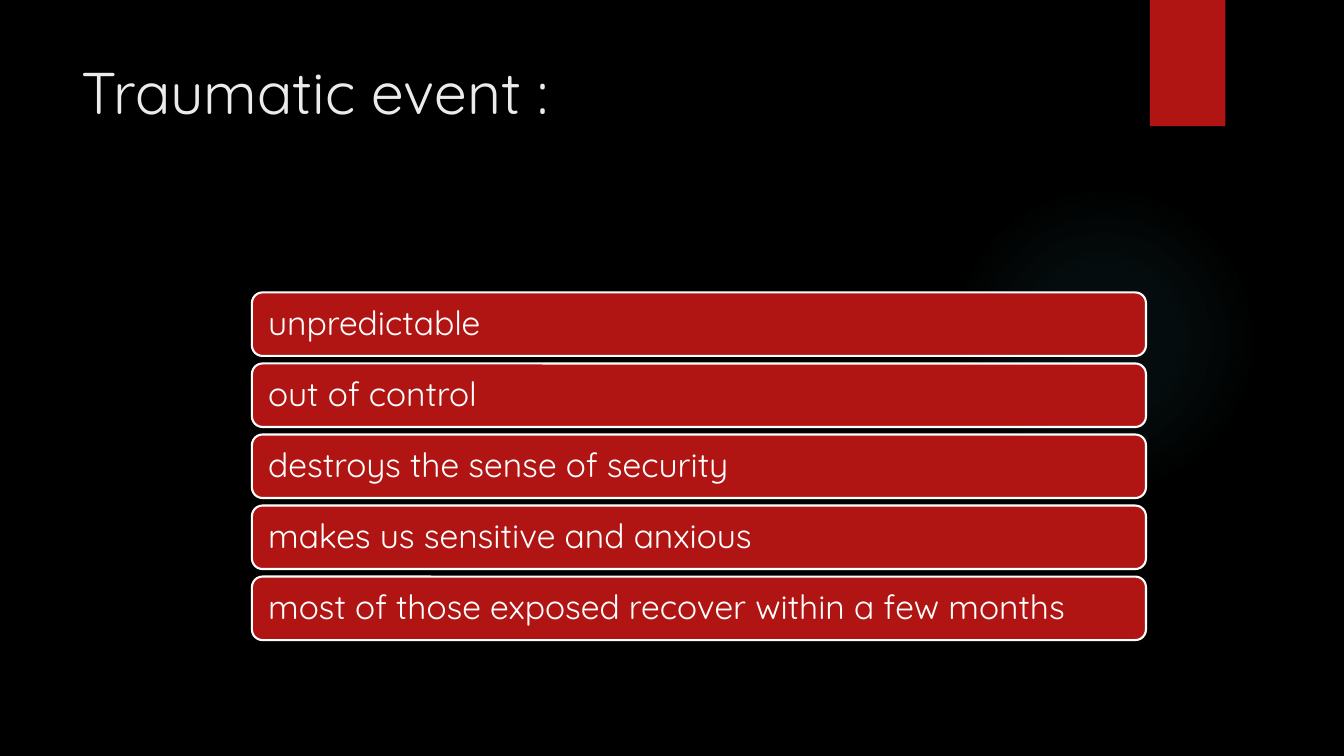
"""Build the "Traumatic event" slide: a title and five red bars on black."""
from lxml import etree
from pptx import Presentation
from pptx.dml.color import RGBColor
from pptx.enum.shapes import MSO_SHAPE
from pptx.enum.text import MSO_ANCHOR, PP_ALIGN
from pptx.util import Cm, Pt

OVAL = MSO_SHAPE.OVAL
RECTANGLE = MSO_SHAPE.RECTANGLE
ROUNDED = MSO_SHAPE.ROUNDED_RECTANGLE
TOP = MSO_ANCHOR.TOP
MIDDLE = MSO_ANCHOR.MIDDLE
LEFT = PP_ALIGN.LEFT

COLORS = {
    "background": "000000",
    "red": "B01513",
    "white": "FFFFFF",
    "title": "EBEBEB",
    "glow": "50B9C1",
}
FONT = "Quicksand"
DRAWING = "http://schemas.openxmlformats.org/drawingml/2006/main"
GLOW_STOPS = [(0, 7), (36, 6), (69, 0)]
FEATURES = [
    "unpredictable",
    "out of control",
    "destroys the sense of security",
    "makes us sensitive and anxious",
    "most of those exposed recover within a few months",
]
BAR_TOP = 7.37
BAR_STEP = 1.79


def add_filled(kind, left, top, width, height, color):
    shape = slide.shapes.add_shape(kind, Cm(left), Cm(top), Cm(width), Cm(height))
    shape.shadow.inherit = False
    shape.fill.solid()
    shape.fill.fore_color.rgb = RGBColor.from_string(COLORS[color])
    shape.line.fill.background()
    return shape


def write_text(text_frame, text, size, color, anchor):
    text_frame.text = text
    text_frame.word_wrap = True
    text_frame.vertical_anchor = anchor
    paragraph = text_frame.paragraphs[0]
    paragraph.alignment = LEFT
    font = paragraph.runs[0].font
    font.name = FONT
    font.size = Pt(size)
    font.color.rgb = RGBColor.from_string(COLORS[color])
    return paragraph


presentation = Presentation()
presentation.slide_width = Cm(33.87)
presentation.slide_height = Cm(19.05)
slide = presentation.slides.add_slide(presentation.slide_layouts[5])
slide.background.fill.solid()
slide.background.fill.fore_color.rgb = RGBColor.from_string(COLORS["background"])

glow = add_filled(OVAL, 23.9, 4.65, 7.82, 7.82, "glow")
stops = "".join(
    f'<a:gs pos="{position * 1000}"><a:srgbClr val="{COLORS["glow"]}">'
    f'<a:alpha val="{opacity * 1000}"/></a:srgbClr></a:gs>'
    for position, opacity in GLOW_STOPS
)
gradient = etree.fromstring(
    f'<a:gradFill xmlns:a="{DRAWING}" rotWithShape="1"><a:gsLst>{stops}</a:gsLst>'
    '<a:path path="circle"><a:fillToRect l="50000" t="50000" r="50000" b="50000"/>'
    "</a:path></a:gradFill>"
)
properties = glow.element.spPr
properties.replace(properties.find(f"{{{DRAWING}}}solidFill"), gradient)

add_filled(RECTANGLE, 28.98, 0, 1.9, 3.18, "red")

title = slide.shapes.title
title.left, title.top, title.width, title.height = Cm(1.8), Cm(1.27), Cm(26.14), Cm(3.89)
write_text(title.text_frame, "Traumatic event :", 42, "title", TOP)

for index, feature in enumerate(FEATURES):
    bar = add_filled(ROUNDED, 6.35, BAR_TOP + index * BAR_STEP, 22.53, 1.6, "red")
    bar.line.color.rgb = RGBColor.from_string(COLORS["white"])
    bar.line.width = Pt(1.5)
    bar.text_frame.margin_left = bar.text_frame.margin_right = Cm(0.33)
    paragraph = write_text(bar.text_frame, feature, 24, "white", MIDDLE)
    paragraph.line_spacing = 0.9

presentation.save("out.pptx")
